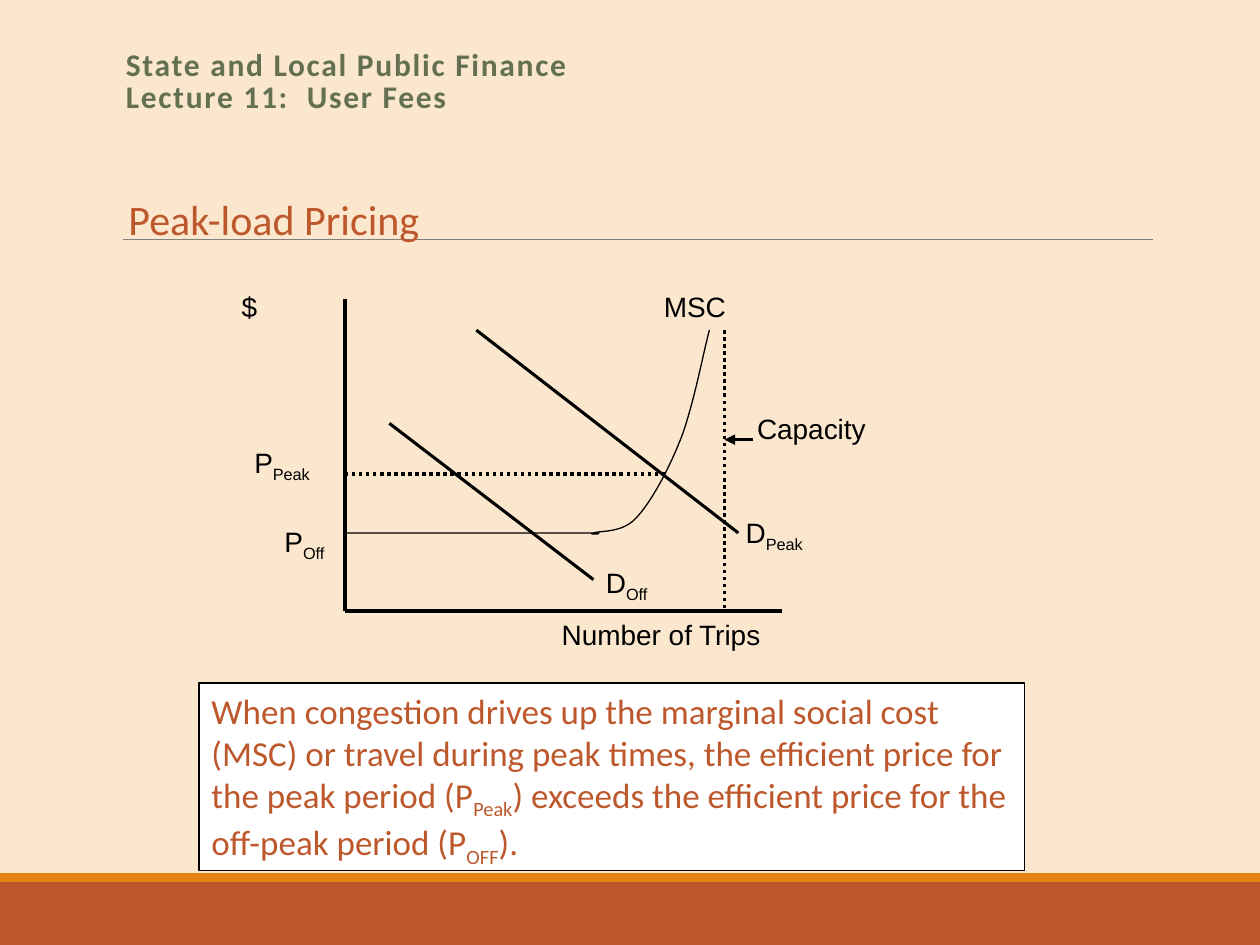
from lxml import etree
from pptx import Presentation
from pptx.dml.color import RGBColor
from pptx.enum.dml import MSO_LINE
from pptx.enum.shapes import MSO_CONNECTOR, MSO_SHAPE
from pptx.enum.text import MSO_ANCHOR
from pptx.oxml.ns import qn
from pptx.util import Pt

RECTANGLE = MSO_SHAPE.RECTANGLE
STRAIGHT = MSO_CONNECTOR.STRAIGHT
DOTTED = MSO_LINE.ROUND_DOT
TOP = MSO_ANCHOR.TOP
MIDDLE = MSO_ANCHOR.MIDDLE
PX = 9144

THEME = {
    "cream": RGBColor.from_string("FBE6CE"),
    "rust": RGBColor.from_string("BD582C"),
    "orange": RGBColor.from_string("E48312"),
    "green": RGBColor.from_string("637052"),
    "gray": RGBColor.from_string("808080"),
    "black": RGBColor.from_string("000000"),
    "white": RGBColor.from_string("FFFFFF"),
    "heading": 24,
    "course": 18,
    "note": 20,
    "label": 16,
}

deck = Presentation()
deck.slide_width = 1000 * PX
deck.slide_height = 750 * PX
page = deck.slides.add_slide(deck.slide_layouts[6])
page.background.fill.solid()
page.background.fill.fore_color.rgb = THEME["cream"]


def add_text(text, at, size="label", color="black", font="Arial", bold=False,
             tracking=0, spacing=1.0, side_inset=10, anchor=TOP, fill=None, border=None):
    box = page.shapes.add_textbox(*[length * PX for length in at])
    if fill:
        box.fill.solid()
        box.fill.fore_color.rgb = THEME[fill]
    if border:
        box.line.color.rgb = THEME[border]
        box.line.width = Pt(0.75)
    frame = box.text_frame
    frame.word_wrap = True
    frame.vertical_anchor = anchor
    frame.margin_left = frame.margin_right = side_inset * PX
    frame.margin_top = frame.margin_bottom = 5 * PX
    para = frame.paragraphs[0]
    para.line_spacing = spacing
    for row, line in enumerate(text.split("\n")):
        if row:
            para.add_line_break()
        for index, piece in enumerate(line.split("|")):
            span = para.add_run()
            span.text = piece
            span.font.name = font
            span.font.size = Pt(THEME[size])
            span.font.bold = bold
            span.font.color.rgb = THEME[color]
            if tracking:
                span.font._element.set("spc", str(tracking))
            if index % 2:
                span.font._element.set("baseline", "-25000")


def add_line(start, end, width, color="black", dash=None, arrow=False):
    line = page.shapes.add_connector(STRAIGHT, *[length * PX for length in start + end])
    line.line.color.rgb = THEME[color]
    line.line.width = Pt(width)
    if dash:
        line.line.dash_style = dash
    if arrow:
        outline = line.line._get_or_add_ln()
        etree.SubElement(outline, qn("a:tailEnd"), type="triangle")
    etree.SubElement(line._element.spPr, qn("a:effectLst"))


for top, height, color in [(700, 50, "rust"), (693, 7, "orange")]:
    band = page.shapes.add_shape(RECTANGLE, 0, top * PX, 1000 * PX, height * PX)
    band.shadow.inherit = False
    band.fill.solid()
    band.fill.fore_color.rgb = THEME[color]
    band.line.fill.background()

add_line((98, 190), (915, 190), 0.5, color="gray")
add_text("Peak-load Pricing", (102, 153, 506, 41), size="heading", color="rust",
         font="Calibri", spacing=0.9, side_inset=0)

axis_left, axis_bottom, capacity, curve_top = 274, 485, 575, 262
add_line((axis_left, 237), (axis_left, axis_bottom), 2)
add_line((axis_left, axis_bottom), (621, axis_bottom), 2)
add_line((309, 336), (471, 460), 1.75)

for text, at in [
    ("$", (182, 225, 35, 50)),
    ("Number of Trips", (436, 485, 208, 50)),
    ("MSC", (517, 225, 131, 37)),
    ("P|Off", (216, 411, 104, 75)),
    ("D|Off", (471, 444, 131, 37)),
    ("P|Peak", (192, 349, 104, 75)),
    ("Capacity", (591, 322, 131, 43)),
    ("D|Peak", (582, 404, 131, 37)),
]:
    add_text(text, at)

add_text("When congestion drives up the marginal social cost (MSC) or travel during "
         "peak times, the efficient price for the peak period (P|Peak|) exceeds the "
         "efficient price for the off-peak period (P|OFF|).",
         (158, 542, 655, 149), size="note", color="rust", font="Calibri",
         fill="white", border="black")

add_line((378, curve_top), (586, 423), 1.75)

cost_start = (axis_left, 423)
cost_bends = [
    ((350, 423), (426, 423), (459, 423)),
    ((492, 423), (463, 425), (471, 423)),
    ((478, 421), (494, 423), (505, 411)),
    ((517, 398), (530, 374), (540, 349)),
    ((550, 324), (559, 276), (563, curve_top)),
]
steps = 16
cost_points = []
bend_start = cost_start
for first, second, bend_end in cost_bends:
    for step in range(1, steps + 1):
        t = step / steps
        cost_points.append([
            round(PX * ((1 - t) ** 3 * a + 3 * (1 - t) ** 2 * t * b
                        + 3 * (1 - t) * t ** 2 * c + t ** 3 * d))
            for a, b, c, d in zip(bend_start, first, second, bend_end)
        ])
    bend_start = bend_end
builder = page.shapes.build_freeform(cost_start[0] * PX, cost_start[1] * PX)
builder.add_line_segments(cost_points, close=False)
cost_curve = builder.convert_to_shape()
cost_curve.shadow.inherit = False
cost_curve.fill.background()
cost_curve.line.color.rgb = THEME["black"]
cost_curve.line.width = Pt(0.75)

add_line((528, 376), (axis_left, 376), 2, dash=DOTTED)
add_line((capacity, curve_top), (capacity, axis_bottom), 2, dash=DOTTED)
add_line((598, 349), (capacity, 349), 2, arrow=True)

add_text("State and Local Public Finance\nLecture 11:  User Fees", (90, 33, 825, 65),
         size="course", color="green", font="Calibri", bold=True, tracking=100,
         spacing=0.85, anchor=MIDDLE)

deck.save("out.pptx")
